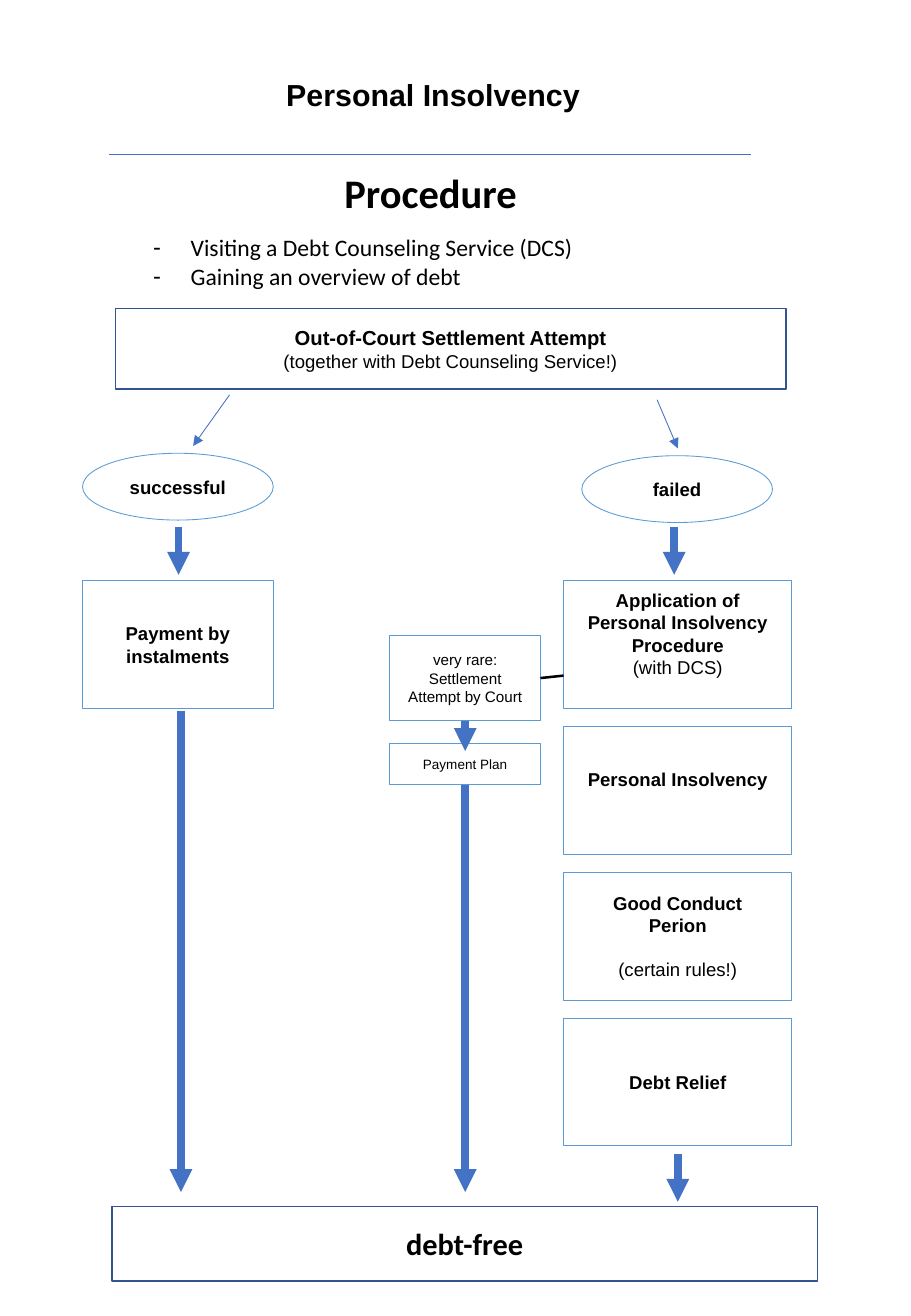
from collections import namedtuple

from lxml import etree
from pptx import Presentation
from pptx import util as u
from pptx.dml.color import RGBColor
from pptx.enum import shapes, text
from pptx.oxml import ns

PX = 9144  # 100 px to the inch
BLACK = RGBColor(0x00, 0x00, 0x00)
WHITE = RGBColor(0xFF, 0xFF, 0xFF)
NAVY = RGBColor(0x32, 0x54, 0x91)
BLUE = RGBColor(0x44, 0x72, 0xC4)
SKY = RGBColor(0x5B, 0x9B, 0xD5)

RECTANGLE = shapes.MSO_SHAPE.RECTANGLE
OVAL = shapes.MSO_SHAPE.OVAL

Line = namedtuple("Line", "text size bold before", defaults=(11, True, 0))


class Flowchart:
    def __init__(self, slide):
        self.slide = slide

    def set_lines(self, text_frame, lines, font="Arial", align=text.PP_ALIGN.CENTER):
        text_frame.word_wrap = True
        text_frame.auto_size = text.MSO_AUTO_SIZE.NONE
        text_frame.text = "\n".join(line.text for line in lines)
        for paragraph, line in zip(text_frame.paragraphs, lines):
            paragraph.alignment = align
            paragraph.space_before = u.Pt(line.before)
            run_font = paragraph.runs[0].font
            run_font.name, run_font.size, run_font.bold = font, u.Pt(line.size), line.bold
            run_font.color.rgb = BLACK

    def place(self, shape, box):
        shape.left, shape.top, shape.width, shape.height = (n * PX for n in box)

    def title(self, box, line):
        title = self.slide.shapes.title
        self.place(title, box)
        self.set_lines(title.text_frame, [line])
        title.text_frame.vertical_anchor = text.MSO_ANCHOR.MIDDLE

    def bullets(self, box, lines, indent):
        body = self.slide.placeholders[1]
        self.place(body, box)
        self.set_lines(body.text_frame, lines, "Calibri", text.PP_ALIGN.LEFT)
        for paragraph in body.text_frame.paragraphs:
            properties = paragraph._p.get_or_add_pPr()
            properties.set("marL", str(indent * PX))
            properties.set("indent", str(-indent * PX))
            etree.SubElement(properties, ns.qn("a:buChar"), char="-")

    def label(self, box, line, font):
        label = self.slide.shapes.add_textbox(*(n * PX for n in box))
        self.set_lines(label.text_frame, [line], font)

    def node(self, box, lines, kind=RECTANGLE, color=SKY, width=0.5,
             font="Arial", bottom_inset=5):
        shape = self.slide.shapes.add_shape(kind, *(n * PX for n in box))
        shape.shadow.inherit = False
        shape.fill.solid()
        shape.fill.fore_color.rgb = WHITE
        shape.line.color.rgb = color
        shape.line.width = u.Pt(width)
        self.set_lines(shape.text_frame, lines, font)
        shape.text_frame.vertical_anchor = text.MSO_ANCHOR.MIDDLE
        shape.text_frame.margin_bottom = bottom_inset * PX
        return shape

    def connect(self, start, end, width=4.5, color=BLUE, arrow=True, source=None):
        """Draw a line; source is an optional (shape, site) to join the start to."""
        connector = self.slide.shapes.add_connector(
            shapes.MSO_CONNECTOR.STRAIGHT, *(n * PX for n in start + end))
        if source:
            connector.begin_connect(*source)
        connector.line.color.rgb = color
        connector.line.width = u.Pt(width)
        properties = connector.element.spPr
        if arrow:
            outline = properties.find(ns.qn("a:ln"))
            etree.SubElement(outline, ns.qn("a:tailEnd"), type="triangle")
        etree.SubElement(properties, ns.qn("a:effectLst"))


def main():
    presentation = Presentation()
    presentation.slide_width, presentation.slide_height = 750 * PX, 1083 * PX
    slide = presentation.slides.add_slide(presentation.slide_layouts[1])
    chart = Flowchart(slide)

    # Heading and first steps
    chart.title((84, 58, 545, 40), Line("Personal Insolvency", 18))
    chart.connect((90, 127), (618, 127), 0.5, arrow=False)
    chart.label((265, 133, 179, 50), Line("Procedure", 24), "Calibri")
    chart.bullets((116, 187, 511, 57), [
        Line("Visiting a Debt Counseling Service (DCS)", 14, False),
        Line("Gaining an overview of debt", 14, False)], 31)

    # Settlement attempt and its two outcomes
    chart.node((95, 254, 552, 66), [
        Line("Out-of-Court Settlement Attempt", 12),
        Line("(together with Debt Counseling Service!)", bold=False)],
        color=NAVY, width=1)
    chart.connect((189, 325), (159, 367), 0.5)
    chart.connect((541, 329), (558, 369), 0.5)
    chart.node((68, 373, 157, 55), [Line("successful")], OVAL)
    chart.node((479, 375, 157, 55), [Line("failed")], OVAL)
    for x in (147, 555):
        chart.connect((x, 434), (x, 473))

    # Left branch: instalments
    chart.node((68, 478, 157, 105), [Line("Payment by"), Line("instalments")])
    chart.connect((149, 585), (149, 981))

    # Right branch: equal boxes, the first two with text raised by one line
    stages = [
        ([Line("Application of"), Line("Personal Insolvency"), Line("Procedure"),
          Line("(with DCS)", bold=False)], 23),
        ([Line("Personal Insolvency")], 23),
        ([Line("Good Conduct"), Line("Perion"),
          Line("(certain rules!)", bold=False, before=13)], 5),
        ([Line("Debt Relief")], 5),
    ]
    for index, (lines, bottom_inset) in enumerate(stages):
        chart.node((464, 478 + 120 * index, 188, 105), lines, bottom_inset=bottom_inset)
    chart.connect((558, 950), (558, 989))

    # Middle branch: settlement by court
    court = chart.node((321, 523, 124, 70), [
        Line("very rare:", 9, False), Line("Settlement Attempt by Court", 9, False)])
    plan = chart.node((321, 612, 124, 34), [Line("Payment Plan", 8, False)])
    chart.connect((445, 558), (464, 556), 1.5, BLACK, arrow=False, source=(court, 3))
    chart.connect((383, 593), (383, 618), source=(court, 2))
    chart.connect((383, 646), (383, 981), source=(plan, 2))

    # Final state
    chart.node((92, 993, 581, 61), [Line("debt-free", 18)],
               color=NAVY, width=1, font="Calibri")

    presentation.save("out.pptx")


if __name__ == "__main__":
    main()
